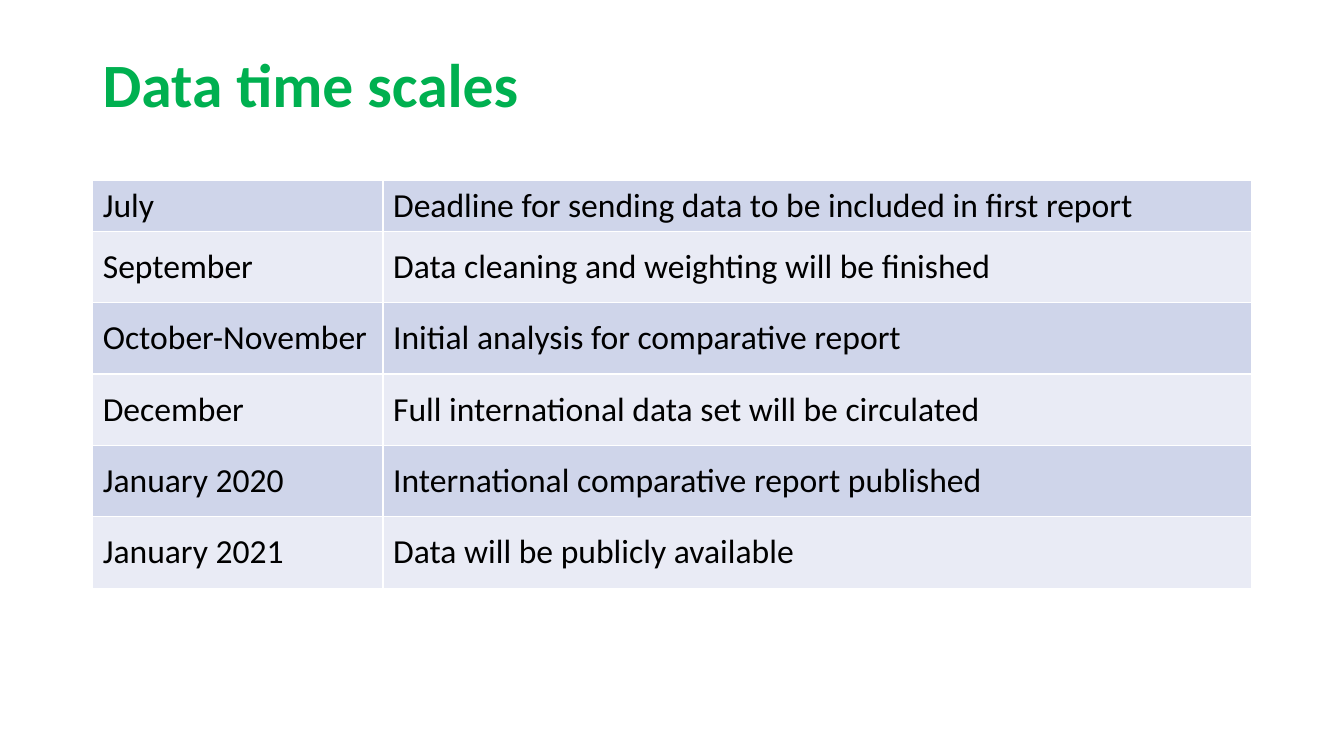
from lxml.etree import SubElement
from pptx import Presentation
from pptx.dml.color import RGBColor
from pptx.enum.text import MSO_ANCHOR
from pptx.oxml.ns import qn
from pptx.util import Pt

GREEN = RGBColor(0x00, 0xB0, 0x50)
BLACK = RGBColor(0x00, 0x00, 0x00)
WHITE = RGBColor(0xFF, 0xFF, 0xFF)
BANDS = (RGBColor(0xCF, 0xD5, 0xEA), RGBColor(0xE9, 0xEB, 0xF5))
FONT = "Calibri"

MILESTONES = [
    ("July", "Deadline for sending data to be included in first report"),
    ("September", "Data cleaning and weighting will be finished"),
    ("October-November", "Initial analysis for comparative report"),
    ("December", "Full international data set will be circulated"),
    ("January 2020", "International comparative report published"),
    ("January 2021", "Data will be publicly available"),
]
COLUMN_WIDTHS = (207.4, 620.6)
FIRST_ROW_HEIGHT = 36.4
ROW_HEIGHT = 51


def write_text(frame, text, *, size, color, bold=False, line_spacing=1.0):
    """Put one formatted paragraph into a text frame."""
    frame.word_wrap = True
    para = frame.paragraphs[0]
    para.line_spacing = line_spacing
    span = para.add_run()
    span.text = text
    span.font.name = FONT
    span.font.size = Pt(size)
    span.font.bold = bold
    span.font.color.rgb = color


def add_title(page, text):
    """Add the slide heading."""
    box = page.shapes.add_textbox(Pt(66.24), Pt(28.8), Pt(619.2), Pt(67))
    box.text_frame.vertical_anchor = MSO_ANCHOR.MIDDLE
    write_text(box.text_frame, text, size=44, color=GREEN, bold=True, line_spacing=0.9)


def set_borders(cell, color, width):
    """Draw a solid line on all four sides of a cell."""
    properties = cell._tc.get_or_add_tcPr()
    for side in ("a:lnL", "a:lnR", "a:lnT", "a:lnB"):
        line = SubElement(properties, qn(side), w=str(Pt(width)))
        fill = SubElement(line, qn("a:solidFill"))
        SubElement(fill, qn("a:srgbClr"), val=str(color))


def add_schedule(page, milestones):
    """Add the banded table of dates and milestones."""
    heights = [FIRST_ROW_HEIGHT] + [ROW_HEIGHT] * (len(milestones) - 1)
    table = page.shapes.add_table(
        len(milestones), len(COLUMN_WIDTHS),
        Pt(66.24), Pt(128.8), Pt(sum(COLUMN_WIDTHS)), Pt(sum(heights)),
    ).table
    table.first_row = False
    table.horz_banding = False
    for column, width in zip(table.columns, COLUMN_WIDTHS):
        column.width = Pt(width)
    for index, (row, height, texts) in enumerate(zip(table.rows, heights, milestones)):
        row.height = Pt(height)
        for cell, text in zip(row.cells, texts):
            set_borders(cell, WHITE, 1)
            cell.fill.solid()
            cell.fill.fore_color.rgb = BANDS[index % 2]
            cell.vertical_anchor = MSO_ANCHOR.MIDDLE
            write_text(cell.text_frame, text, size=24, color=BLACK)


def main():
    """Build and save the slide."""
    deck = Presentation()
    deck.slide_width, deck.slide_height = Pt(960), Pt(540)
    page = deck.slides.add_slide(deck.slide_layouts[6])
    add_title(page, "Data time scales")
    add_schedule(page, MILESTONES)
    deck.save("out.pptx")


if __name__ == "__main__":
    main()
